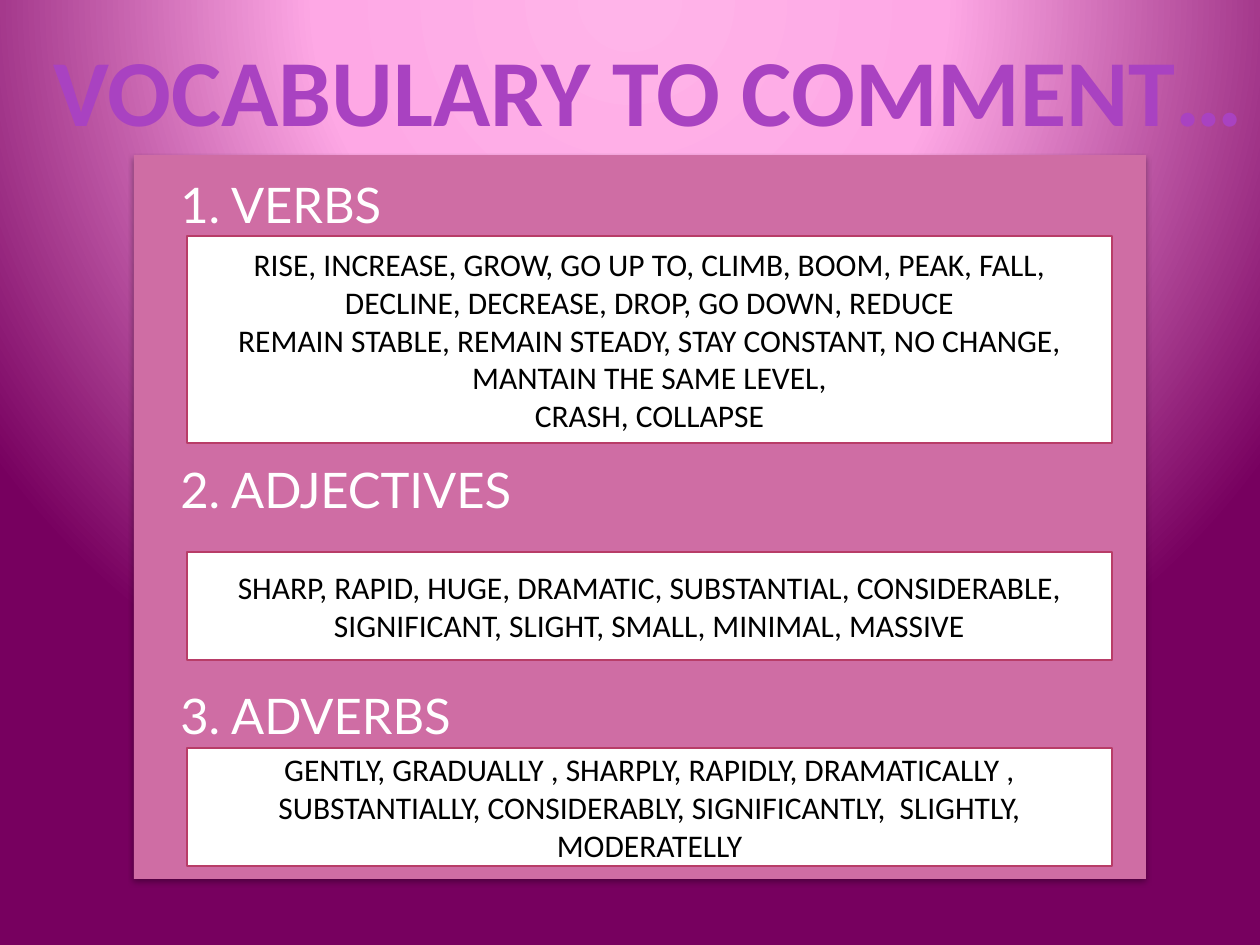
from dataclasses import dataclass

from lxml import etree
from pptx import Presentation
from pptx.dml.color import RGBColor
from pptx.enum.shapes import MSO_SHAPE
from pptx.enum.text import MSO_ANCHOR, MSO_AUTO_SIZE, PP_ALIGN
from pptx.oxml.ns import qn
from pptx.util import Emu, Pt

RECTANGLE = MSO_SHAPE.RECTANGLE
LEFT, CENTER = PP_ALIGN.LEFT, PP_ALIGN.CENTER
TOP, MIDDLE = MSO_ANCHOR.TOP, MSO_ANCHOR.MIDDLE
GROW = MSO_AUTO_SIZE.SHAPE_TO_FIT_TEXT
TITLE_ONLY = 5
EMU_PER_PX = 914400 / 126


@dataclass(frozen=True)
class Theme:
    panel: str = "CF6DA4"
    box: str = "FFFFFF"
    border: str = "B83D68"
    heading: str = "FFFFFF"
    words: str = "000000"
    shadow: str = "000000"
    backdrop: tuple = ((0, "FFB4E9"), (40, "FEA8E5"), (100, "77005F"))
    title: tuple = ((0, "DB8AF1"), (75, "A942C1"), (100, "9C1FB6"))
    body_font: str = "Calibri"
    heading_font: str = "Lato"
    title_size: int = 54
    heading_size: int = 28
    words_size: int = 18


@dataclass(frozen=True)
class Box:
    left: int
    top: int
    width: int
    height: int

    def emu(self) -> list:
        return [px(n) for n in (self.left, self.top, self.width, self.height)]


@dataclass(frozen=True)
class Section:
    heading: str
    heading_top: int
    words_top: int
    words_height: int
    lines: tuple


THEME = Theme()
TITLE = Box(35, 26, 1227, 127)
PANEL = Box(134, 155, 1012, 724)
HEADING_LEFT, HEADING_WIDTH, HEADING_HEIGHT = 168, 942, 72
WORDS_LEFT, WORDS_WIDTH = 187, 925
SECTIONS = (
    Section("1. VERBS", 168, 236, 207, (
        "RISE, INCREASE, GROW, GO UP TO, CLIMB, BOOM, PEAK, FALL, "
        "DECLINE, DECREASE, DROP, GO DOWN, REDUCE",
        "REMAIN STABLE, REMAIN STEADY, STAY CONSTANT, NO CHANGE, "
        "MANTAIN THE SAME LEVEL,",
        "CRASH, COLLAPSE")),
    Section("2. ADJECTIVES", 453, 552, 108, (
        "SHARP, RAPID, HUGE, DRAMATIC, SUBSTANTIAL, CONSIDERABLE, "
        "SIGNIFICANT, SLIGHT, SMALL, MINIMAL, MASSIVE",)),
    Section("3. ADVERBS", 679, 748, 118, (
        "GENTLY, GRADUALLY , SHARPLY, RAPIDLY, DRAMATICALLY , "
        "SUBSTANTIALLY, CONSIDERABLY, SIGNIFICANTLY,  SLIGHTLY, "
        "MODERATELLY",)),
)


def px(length: int) -> Emu:
    return Emu(round(length * EMU_PER_PX))


def add_part(parent, tag: str, **attributes):
    values = {name: str(value) for name, value in attributes.items()}
    return etree.SubElement(parent, qn(tag), values)


def add_gradient(parent, stops: tuple):
    """Put a gradient fill first in parent; the caller adds its direction."""
    gradient = add_part(parent, "a:gradFill", rotWithShape=1)
    parent.insert(0, gradient)
    stop_list = add_part(gradient, "a:gsLst")
    for percent, color in stops:
        stop = add_part(stop_list, "a:gs", pos=percent * 1000)
        add_part(stop, "a:srgbClr", val=color)
    return gradient


def paint_background(slide) -> None:
    slide.background.fill.solid()
    properties = slide.element.find(".//" + qn("p:bgPr"))
    properties.remove(properties.find(qn("a:solidFill")))
    gradient = add_gradient(properties, THEME.backdrop)
    circle = add_part(gradient, "a:path", path="circle")
    add_part(circle, "a:fillToRect", l=50000, t=-80000, r=50000, b=180000)


def write(shape, lines: tuple, align, frame_format: dict, font_format: dict) -> None:
    frame = shape.text_frame
    for name, value in frame_format.items():
        setattr(frame, name, value)
    frame.text = "\n".join(lines)
    for paragraph in frame.paragraphs:
        paragraph.alignment = align
        for name, value in font_format.items():
            setattr(paragraph.runs[0].font, name, value)


def add_title(slide) -> None:
    title = slide.shapes.title
    title.left, title.top, title.width, title.height = TITLE.emu()
    write(title, ("VOCABULARY TO COMMENT…",), CENTER,
          {"word_wrap": False, "auto_size": GROW, "vertical_anchor": TOP},
          {"name": THEME.body_font, "size": Pt(THEME.title_size), "bold": True})
    run_properties = title.element.find(".//" + qn("a:rPr"))
    gradient = add_gradient(run_properties, THEME.title)
    add_part(gradient, "a:lin", ang=90 * 60000, scaled=0)


def add_rectangle(slide, box: Box, color: str):
    rectangle = slide.shapes.add_shape(RECTANGLE, *box.emu())
    rectangle.shadow.inherit = False
    rectangle.fill.solid()
    rectangle.fill.fore_color.rgb = RGBColor.from_string(color)
    rectangle.line.fill.background()
    return rectangle


def add_panel(slide) -> None:
    panel = add_rectangle(slide, PANEL, THEME.panel)
    effects = panel.element.find(".//" + qn("a:effectLst"))
    shadow = add_part(effects, "a:outerShdw", blurRad=Pt(3), dist=Pt(2),
                      dir=90 * 60000, rotWithShape=0)
    color = add_part(shadow, "a:srgbClr", val=THEME.shadow)
    add_part(color, "a:alpha", val=35000)


def add_heading(slide, section: Section) -> None:
    box = Box(HEADING_LEFT, section.heading_top, HEADING_WIDTH, HEADING_HEIGHT)
    heading = slide.shapes.add_textbox(*box.emu())
    write(heading, (section.heading,), LEFT,
          {"word_wrap": True, "auto_size": GROW},
          {"name": THEME.heading_font, "size": Pt(THEME.heading_size)})
    font = heading.text_frame.paragraphs[0].runs[0].font
    font.color.rgb = RGBColor.from_string(THEME.heading)


def add_words(slide, section: Section) -> None:
    box = Box(WORDS_LEFT, section.words_top, WORDS_WIDTH, section.words_height)
    words = add_rectangle(slide, box, THEME.box)
    words.line.color.rgb = RGBColor.from_string(THEME.border)
    words.line.width = Pt(1.5)
    write(words, section.lines, CENTER,
          {"word_wrap": True, "vertical_anchor": MIDDLE},
          {"name": THEME.body_font, "size": Pt(THEME.words_size)})
    for paragraph in words.text_frame.paragraphs:
        paragraph.runs[0].font.color.rgb = RGBColor.from_string(THEME.words)


def main() -> None:
    deck = Presentation()
    deck.slide_width, deck.slide_height = px(1260), px(945)
    slide = deck.slides.add_slide(deck.slide_layouts[TITLE_ONLY])
    paint_background(slide)
    add_title(slide)
    add_panel(slide)
    for section in SECTIONS:
        add_heading(slide, section)
    for section in SECTIONS:
        add_words(slide, section)
    deck.save("out.pptx")


if __name__ == "__main__":
    main()
